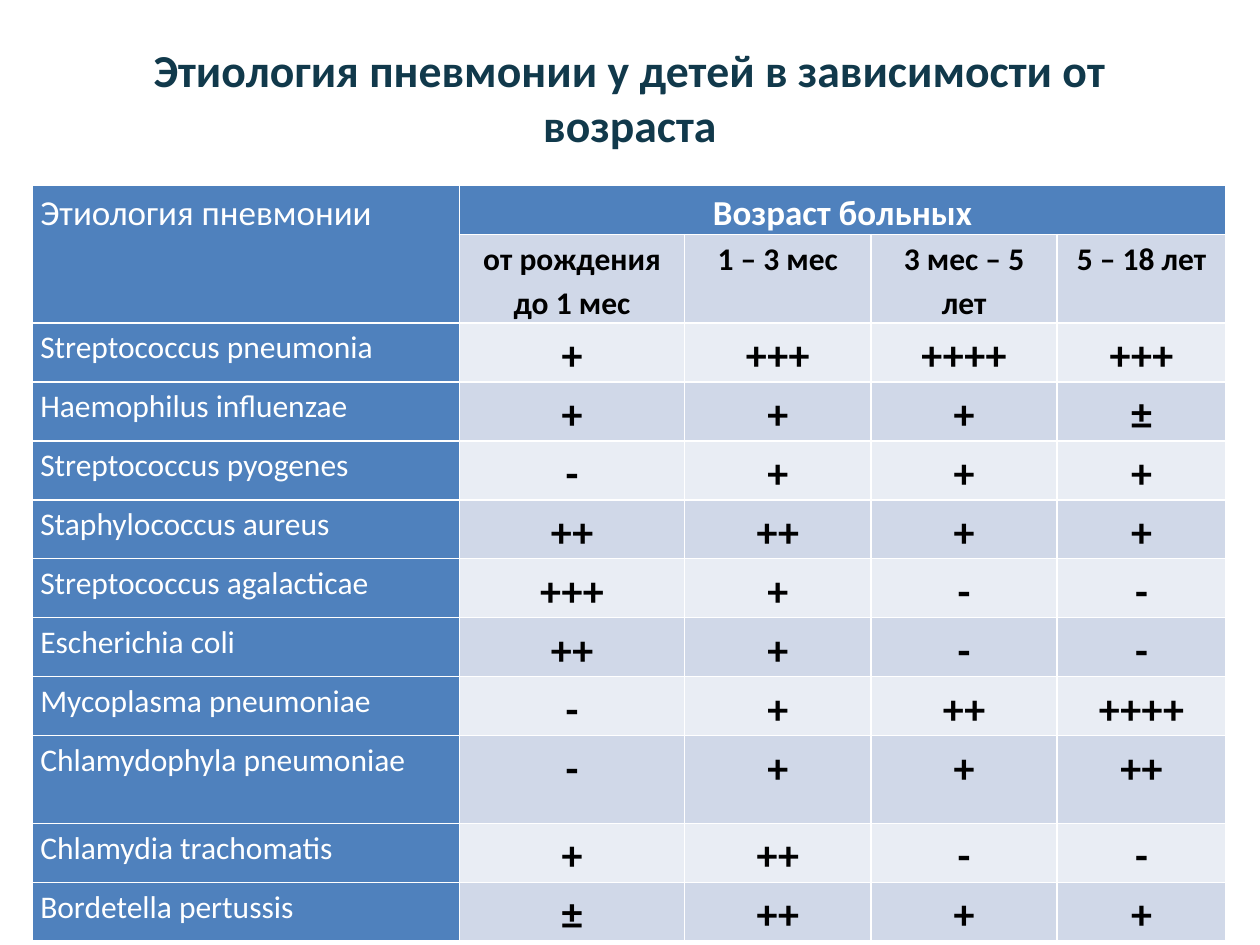
from dataclasses import dataclass

from lxml import etree
from pptx import Presentation
from pptx.dml.color import RGBColor
from pptx.enum.text import MSO_ANCHOR, PP_ALIGN
from pptx.oxml.ns import qn
from pptx.util import Inches, Pt

LEFT, CENTER = PP_ALIGN.LEFT, PP_ALIGN.CENTER
MIDDLE = MSO_ANCHOR.MIDDLE
TITLE_ONLY = 5


@dataclass(frozen=True)
class Theme:
    font: str = "Calibri"
    title: str = "11394B"
    header: str = "4F81BD"
    band_dark: str = "D0D8E8"
    band_light: str = "E9EDF4"
    white: str = "FFFFFF"
    black: str = "000000"
    title_size: float = 26.1
    heading_size: float = 20
    label_size: float = 18
    mark_size: float = 24
    border_width: float = 1


THEME = Theme()

TITLE = "Этиология пневмонии у детей в зависимости от возраста"
CORNER = "Этиология пневмонии"
AGE_HEADING = "Возраст больных"
AGES = ["от рождения до 1 мес", "1 – 3 мес", "3 мес – 5 лет", "5 – 18 лет"]
PATHOGENS = [
    ("Streptococcus pneumonia", "+", "+++", "++++", "+++"),
    ("Haemophilus influenzae", "+", "+", "+", "±"),
    ("Streptococcus pyogenes", "-", "+", "+", "+"),
    ("Staphylococcus aureus", "++", "++", "+", "+"),
    ("Streptococcus agalacticae", "+++", "+", "-", "-"),
    ("Escherichia coli", "++", "+", "-", "-"),
    ("Mycoplasma pneumoniae", "-", "+", "++", "++++"),
    ("Chlamydophyla pneumoniae", "-", "+", "+", "++"),
    ("Chlamydia trachomatis", "+", "++", "-", "-"),
    ("Bordetella pertussis", "±", "++", "+", "+"),
]
COLUMN_WIDTHS = [3.39, 1.79, 1.48, 1.48, 1.34]
ROW_HEIGHTS = [0.38, 0.69] + [0.45] * 5 + [0.38, 0.45, 0.69, 0.45, 0.45]


def write_text(frame, text, *, size, color, bold=False, align=LEFT, spacing=None):
    paragraph = frame.paragraphs[0]
    paragraph.alignment = align
    if spacing:
        paragraph.line_spacing = spacing
    run = paragraph.add_run()
    run.text = text
    run.font.name = THEME.font
    run.font.size = Pt(size)
    run.font.bold = bold
    run.font.color.rgb = RGBColor.from_string(color)


def style_cell(cell, fill):
    """Set the margins, fill and white borders of a cell."""
    cell.margin_left = cell.margin_right = Inches(0.06)
    cell.margin_top = cell.margin_bottom = 0
    cell.fill.solid()
    cell.fill.fore_color.rgb = RGBColor.from_string(fill)
    properties = cell._tc.get_or_add_tcPr()
    for index, side in enumerate(("a:lnL", "a:lnR", "a:lnT", "a:lnB")):
        line = etree.Element(qn(side), w=str(Pt(THEME.border_width)))
        solid = etree.SubElement(line, qn("a:solidFill"))
        etree.SubElement(solid, qn("a:srgbClr"), val=THEME.white)
        properties.insert(index, line)


def fill_cell(cell, text, **text_format):
    write_text(cell.text_frame, text, spacing=1.15, **text_format)


def place_title(slide, left, top, width, height):
    title = slide.shapes.title
    title.left, title.top, title.width, title.height = left, top, width, height
    title.text_frame.word_wrap = True
    title.text_frame.vertical_anchor = MIDDLE
    write_text(title.text_frame, TITLE, size=THEME.title_size,
               color=THEME.title, bold=True, align=CENTER)


def place_table(slide, left, top, width, height):
    table = slide.shapes.add_table(
        len(ROW_HEIGHTS), len(COLUMN_WIDTHS), left, top, width, height).table
    for column, share in zip(table.columns, COLUMN_WIDTHS):
        column.width = int(width * share / sum(COLUMN_WIDTHS))
    for row, share in zip(table.rows, ROW_HEIGHTS):
        row.height = int(height * share / sum(ROW_HEIGHTS))

    # Header row and label column share one fill, the rest is banded
    for row in range(len(ROW_HEIGHTS)):
        band = THEME.band_dark if row % 2 else THEME.band_light
        for column in range(len(COLUMN_WIDTHS)):
            is_header = row == 0 or column == 0
            style_cell(table.cell(row, column), THEME.header if is_header else band)

    # Two-level header
    table.cell(0, 0).merge(table.cell(1, 0))
    table.cell(0, 1).merge(table.cell(0, len(AGES)))
    fill_cell(table.cell(0, 0), CORNER, size=THEME.heading_size, color=THEME.white)
    fill_cell(table.cell(0, 1), AGE_HEADING, size=THEME.heading_size,
              color=THEME.white, bold=True, align=CENTER)
    for column, age in enumerate(AGES, start=1):
        fill_cell(table.cell(1, column), age, size=THEME.label_size,
                  color=THEME.black, bold=True, align=CENTER)

    # Pathogens and their frequency marks
    for row, (pathogen, *marks) in enumerate(PATHOGENS, start=2):
        fill_cell(table.cell(row, 0), pathogen, size=THEME.label_size,
                  color=THEME.white)
        for column, mark in enumerate(marks, start=1):
            fill_cell(table.cell(row, column), mark, size=THEME.mark_size,
                      color=THEME.black, bold=True, align=CENTER)


def main():
    presentation = Presentation()
    presentation.slide_width = Inches(10)
    presentation.slide_height = Inches(7.5)
    slide = presentation.slides.add_slide(presentation.slide_layouts[TITLE_ONLY])
    place_title(slide, Inches(0.5), Inches(0.3), Inches(9), Inches(0.93))
    place_table(slide, Inches(0.26), Inches(1.47), Inches(9.47), Inches(5.8))
    presentation.save("out.pptx")


if __name__ == "__main__":
    main()
